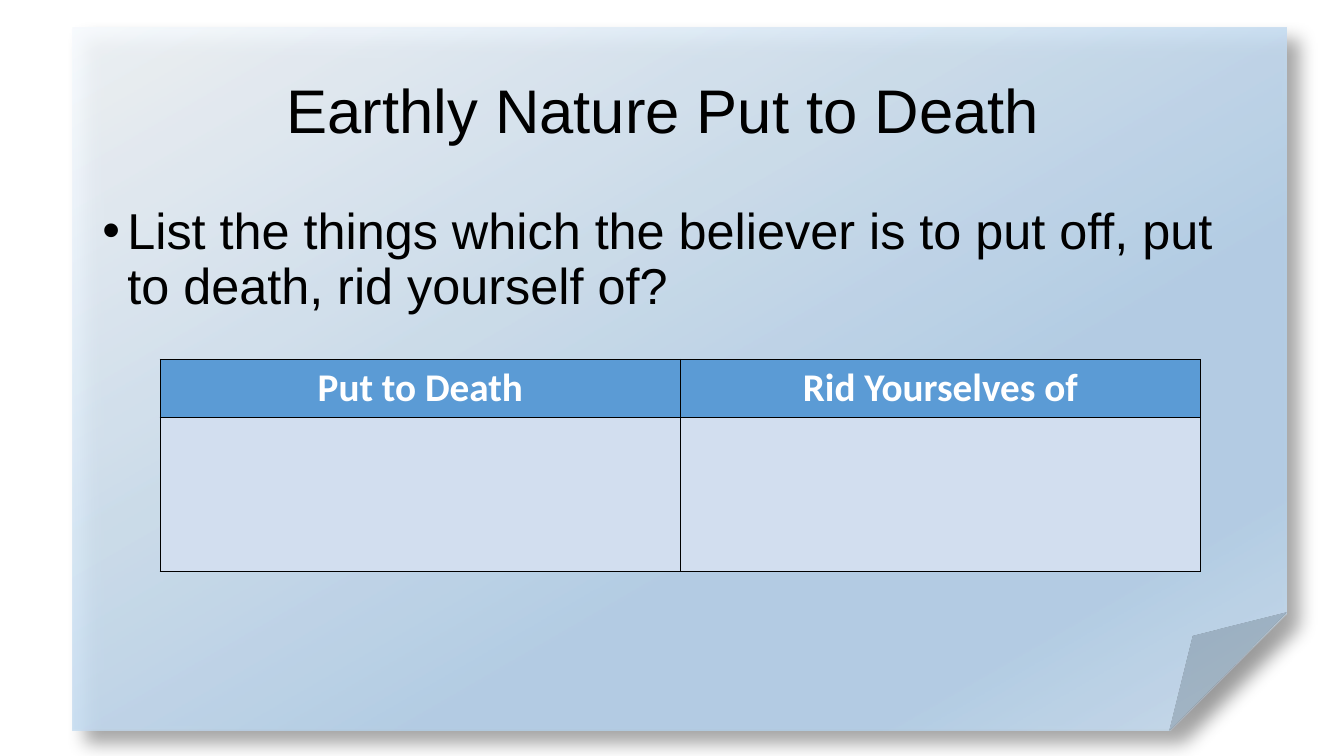
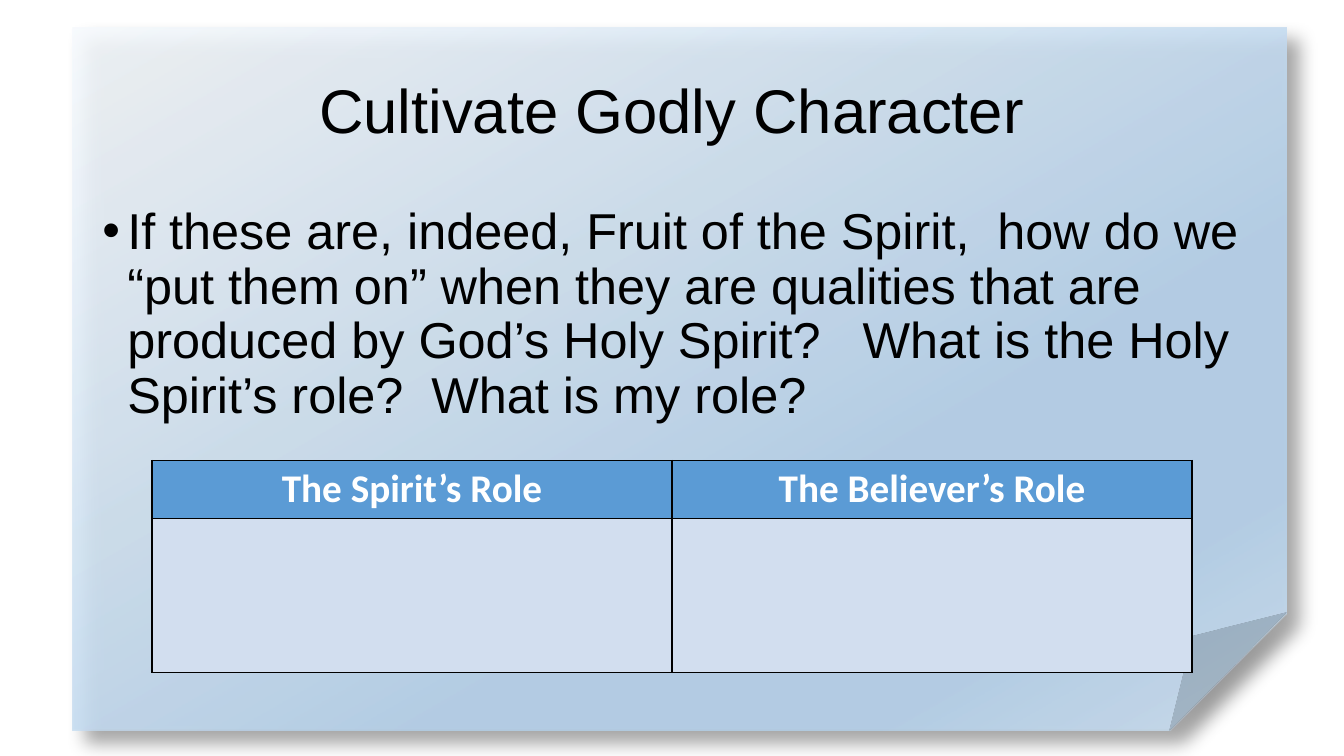
from dataclasses import dataclass

from pptx import Presentation
from pptx.dml.color import RGBColor
from pptx.enum import shapes, text
from pptx.oxml import parse_xml
from pptx.oxml.ns import nsdecls, qn
from pptx.util import Cm, Pt

SLIDES = [
    {
        "title": "Earthly Nature Put to Death ",
        "question": "List the things which the believer is to put off, put to death, rid yourself of?",
        "headers": ["Put to Death", "Rid Yourselves of"],
        "table_at": (4.04, 9.06),
    },
    {
        "title": "Cultivate Godly Character",
        "question": "If these are, indeed, Fruit of the Spirit,  how do we “put them on” when they are "
                    "qualities that are produced by God’s Holy Spirit?   What is the Holy Spirit’s role?  "
                    "What is my role?",
        "headers": ["The Spirit’s Role", "The Believer’s Role"],
        "table_at": (3.83, 11.6),
    },
]


@dataclass(frozen=True)
class Theme:
    text_font: str = "Arial"
    table_font: str = "Calibri"
    title_size: int = 44
    body_size: int = 36
    header_size: int = 28
    ink: str = "000000"
    header_text: str = "FFFFFF"
    header_fill: str = "5B9BD5"
    cell_fill: str = "D2DEEF"
    card_stops: tuple = ((0, "F7FAFD"), (64, "B5D2EC"), (83, "B5D2EC"), (100, "CEE1F2"))
    card_opacity: int = 87


THEME = Theme()
SLIDE_SIZE = (33.87, 19.05)
CARD_BOX = (1.83, 0.69, 30.6, 17.71)
TITLE_BOX = (2.33, 1.01, 29.21, 3.68)
BODY_BOX = (2.33, 5.07, 29.21, 12.09)
TABLE_WIDTH = 26.21
ROW_HEIGHTS = (1.46, 3.89)
BULLET_INDENT = Cm(0.63)


def lengths(values):
    return [Cm(value) for value in values]


def style_font(paragraph, name, size, color, bold=False):
    font = paragraph.font
    font.name, font.size, font.bold = name, Pt(size), bold
    font.color.rgb = RGBColor.from_string(color)


def add_card(slide):
    card = slide.shapes.add_shape(shapes.MSO_SHAPE.FOLDED_CORNER, *lengths(CARD_BOX))
    card.line.fill.background()
    card.fill.background()
    card.shadow.inherit = False
    stops = "".join(
        f'<a:gs pos="{position * 1000}"><a:srgbClr val="{color}">'
        f'<a:alpha val="{THEME.card_opacity * 1000}"/></a:srgbClr></a:gs>'
        for position, color in THEME.card_stops)
    properties = card.element.spPr
    properties.replace(properties.find(qn("a:noFill")), parse_xml(
        f'<a:gradFill {nsdecls("a")} rotWithShape="1"><a:gsLst>{stops}</a:gsLst>'
        '<a:lin ang="3600000" scaled="0"/></a:gradFill>'))
    properties.find(qn("a:effectLst")).append(parse_xml(
        f'<a:outerShdw {nsdecls("a")} blurRad="{Pt(13)}" dist="{Pt(13)}" dir="2700000" '
        f'algn="tl" rotWithShape="0"><a:srgbClr val="{THEME.ink}">'
        '<a:alpha val="40000"/></a:srgbClr></a:outerShdw>'))
    slide.shapes.element.insert(2, card.element)


def set_title(slide, title):
    shape = slide.shapes.title
    shape.left, shape.top, shape.width, shape.height = lengths(TITLE_BOX)
    frame = shape.text_frame
    frame.text = title
    frame.auto_size = text.MSO_AUTO_SIZE.NONE
    frame.vertical_anchor = text.MSO_ANCHOR.MIDDLE
    paragraph = frame.paragraphs[0]
    paragraph.alignment = text.PP_ALIGN.CENTER
    paragraph.line_spacing = 0.9
    style_font(paragraph, THEME.text_font, THEME.title_size, THEME.ink)


def add_question(slide, question):
    frame = slide.shapes.add_textbox(*lengths(BODY_BOX)).text_frame
    frame.word_wrap = True
    paragraph = frame.paragraphs[0]
    paragraph.text = question
    paragraph.line_spacing = 0.9
    properties = paragraph._p.get_or_add_pPr()
    properties.set("marL", str(BULLET_INDENT))
    properties.set("indent", str(-BULLET_INDENT))
    properties.append(parse_xml(f'<a:buFont {nsdecls("a")} typeface="{THEME.text_font}"/>'))
    properties.append(parse_xml(f'<a:buChar {nsdecls("a")} char="•"/>'))
    style_font(paragraph, THEME.text_font, THEME.body_size, THEME.ink)


def style_cell(cell, fill):
    properties = cell._tc.get_or_add_tcPr()
    for side in ("lnL", "lnR", "lnT", "lnB"):
        properties.append(parse_xml(
            f'<a:{side} {nsdecls("a")} w="{Pt(1)}"><a:solidFill>'
            f'<a:srgbClr val="{THEME.ink}"/></a:solidFill></a:{side}>'))
    cell.fill.solid()
    cell.fill.fore_color.rgb = RGBColor.from_string(fill)


def add_answer_table(slide, headers, position):
    size = (TABLE_WIDTH, sum(ROW_HEIGHTS))
    table = slide.shapes.add_table(
        len(ROW_HEIGHTS), len(headers), *lengths(position + size)).table
    table.horz_banding = False
    for row, height in zip(table.rows, ROW_HEIGHTS):
        row.height = Cm(height)
    for column, header in enumerate(headers):
        header_cell, answer_cell = table.cell(0, column), table.cell(1, column)
        style_cell(header_cell, THEME.header_fill)
        style_cell(answer_cell, THEME.cell_fill)
        header_cell.text = header
        paragraph = header_cell.text_frame.paragraphs[0]
        paragraph.alignment = text.PP_ALIGN.CENTER
        style_font(paragraph, THEME.table_font, THEME.header_size, THEME.header_text, bold=True)


def main():
    presentation = Presentation()
    presentation.slide_width, presentation.slide_height = lengths(SLIDE_SIZE)
    layout = presentation.slide_layouts.get_by_name("Title Only")
    for content in SLIDES:
        slide = presentation.slides.add_slide(layout)
        add_card(slide)
        set_title(slide, content["title"])
        add_question(slide, content["question"])
        add_answer_table(slide, content["headers"], content["table_at"])
    presentation.save("out.pptx")


if __name__ == "__main__":
    main()
